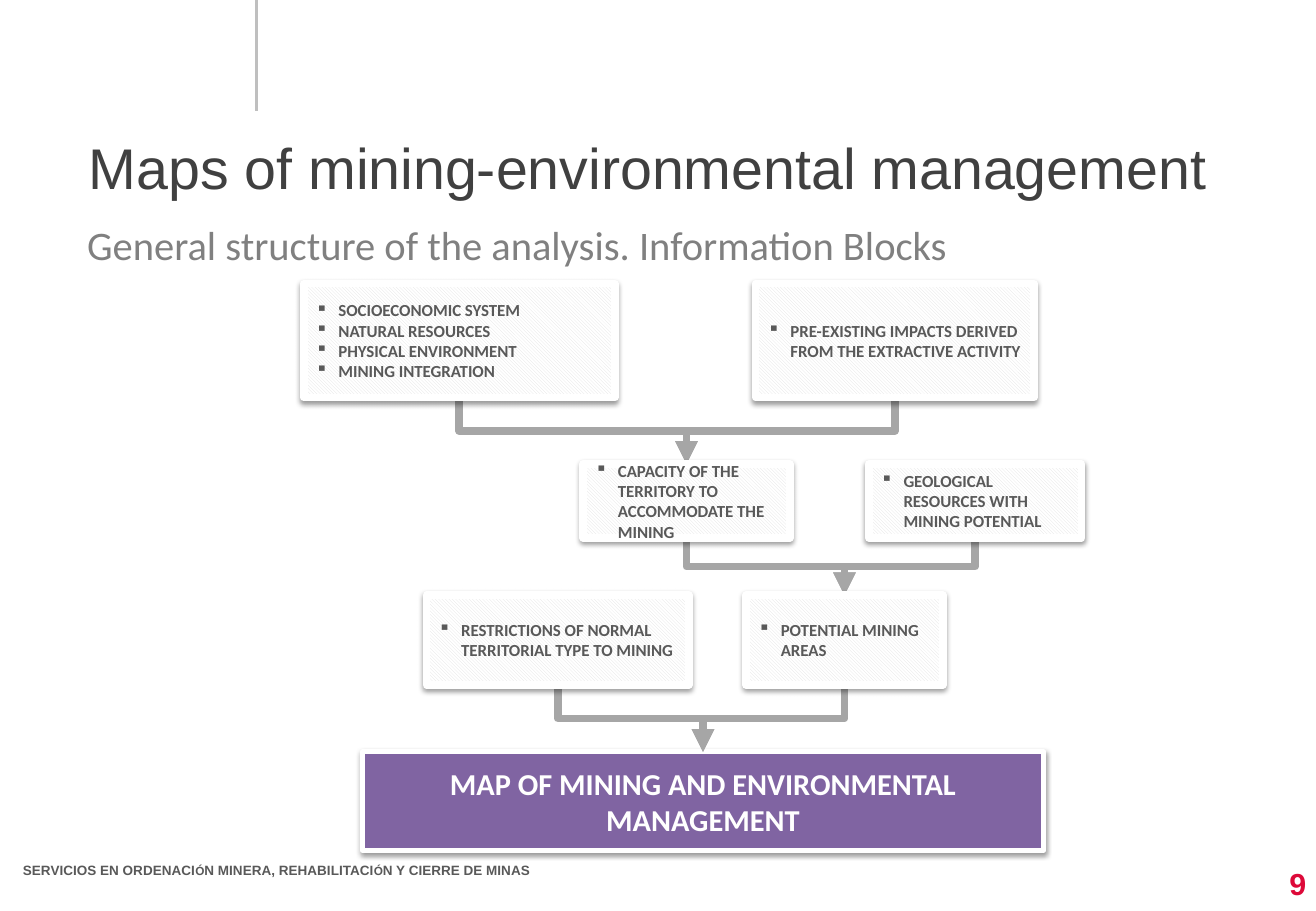
from lxml import etree
from pptx import Presentation
from pptx import util as u
from pptx.dml.color import RGBColor
from pptx.enum import dml, shapes, text
from pptx.oxml import ns

WHITE = RGBColor(0xFF, 0xFF, 0xFF)
HATCH = RGBColor(0xE2, 0xE2, 0xE2)
PURPLE = RGBColor(0x80, 0x64, 0xA2)
ARROW_GREY = RGBColor(0xA6, 0xA6, 0xA6)
RULE_GREY = RGBColor(0xBF, 0xBF, 0xBF)
TITLE_GREY = RGBColor(0x40, 0x40, 0x40)
SUBTITLE_GREY = RGBColor(0x80, 0x80, 0x80)
LABEL_GREY = RGBColor(0x59, 0x59, 0x59)
RED = RGBColor(0xDD, 0x09, 0x39)
BLACK = RGBColor(0, 0, 0)

BULLET_INDENT = 13.5
ROW_1, ROW_2, ROW_3 = (168, 67.7), (275, 44), (352.8, 53.3)
BLOCKS = {
    "geology": (514.8, 126, ROW_2, ["GEOLOGICAL RESOURCES WITH MINING POTENTIAL"]),
    "restrictions": (252.7, 155.5, ROW_3,
                     ["RESTRICTIONS OF NORMAL TERRITORIAL TYPE TO MINING"]),
    "impacts": (447.8, 164.9, ROW_1,
                ["PRE-EXISTING IMPACTS DERIVED FROM THE EXTRACTIVE ACTIVITY"]),
    "capacity": (345.6, 122.4, ROW_2,
                 ["CAPACITY OF THE TERRITORY TO ACCOMMODATE THE MINING"]),
    "systems": (180, 184.3, ROW_1,
                ["SOCIOECONOMIC SYSTEM", "NATURAL RESOURCES",
                 "PHYSICAL ENVIRONMENT", "MINING INTEGRATION"]),
    "potential": (442.1, 116.6, ROW_3, ["POTENTIAL MINING AREAS"]),
}
FLOWS = [("impacts", "capacity"), ("systems", "capacity"),
         ("capacity", "potential"), ("geology", "potential"),
         ("restrictions", "map"), ("potential", "map")]
FOOTER = [("SERVICIOS EN ORDENACI", 8), ("Ó", 7), ("N MINERA, REHABILITACI", 8),
          ("Ó", 7), ("N Y CIERRE DE MINAS", 8)]


def set_font(para, name, color, size=None, bold=False):
    """Format the whole paragraph."""
    para.font.name = name
    para.font.bold = bold
    para.font.color.rgb = color
    if size:
        para.font.size = u.Pt(size)


def add_label(page, left, top, width, height):
    """Add a wrapping text box and return its text frame."""
    box = page.shapes.add_textbox(u.Pt(left), u.Pt(top), u.Pt(width), u.Pt(height))
    box.text_frame.word_wrap = True
    return box.text_frame


def add_shadow(box):
    """Give the box a soft shadow below it."""
    box.shadow.inherit = False
    effects = box._element.spPr.find(ns.qn("a:effectLst"))
    shadow = etree.SubElement(effects, ns.qn("a:outerShdw"),
                              blurRad=str(u.Pt(3.1)), dist=str(u.Pt(1.6)),
                              dir="5400000", rotWithShape="0")
    color = etree.SubElement(shadow, ns.qn("a:srgbClr"), val=str(BLACK))
    etree.SubElement(color, ns.qn("a:alpha"), val="38000")


def add_box(page, left, top, width, height, border):
    """Add a white-framed box with a shadow and centred anchor."""
    box = page.shapes.add_shape(shapes.MSO_SHAPE.ROUNDED_RECTANGLE, u.Pt(left),
                                u.Pt(top), u.Pt(width), u.Pt(height))
    box.adjustments[0] = 0
    box.line.color.rgb = WHITE
    box.line.width = u.Pt(border)
    add_shadow(box)
    box.text_frame.word_wrap = True
    box.text_frame.vertical_anchor = text.MSO_ANCHOR.MIDDLE
    return box


def add_bullet(para):
    """Give the paragraph a square bullet with a hanging indent."""
    props = para._p.get_or_add_pPr()
    props.set("marL", str(u.Pt(BULLET_INDENT)))
    props.set("indent", str(-u.Pt(BULLET_INDENT)))
    etree.SubElement(props, ns.qn("a:buChar"), char="▪")


def add_block(page, left, width, row, items):
    """Add a hatched information block with bulleted items."""
    top, height = row
    box = add_box(page, left, top, width, height, 4.5)
    box.fill.patterned()
    box.fill.pattern = dml.MSO_PATTERN.LIGHT_DOWNWARD_DIAGONAL
    box.fill.fore_color.rgb = HATCH
    box.fill.back_color.rgb = WHITE
    box.text_frame.text = "\n".join(items)
    for para in box.text_frame.paragraphs:
        para.alignment = text.PP_ALIGN.LEFT
        add_bullet(para)
        set_font(para, "Calibri", LABEL_GREY, 10, True)


def add_line(page, kind, ends, color, width):
    """Add a connector without a shadow."""
    line = page.shapes.add_connector(kind, *(u.Pt(end) for end in ends))
    line.line.color.rgb = color
    line.line.width = u.Pt(width)
    etree.SubElement(line._element.spPr, ns.qn("a:effectLst"))
    return line


def add_flow(page, start, end):
    """Add an elbow arrow that leaves downwards and arrives downwards."""
    (x1, y1), (x2, y2) = start, end
    mid_x, mid_y = (x1 + x2) / 2, (y1 + y2) / 2
    rightward = x2 > x1
    half_drop = (y2 - y1) / 2 * (-1 if rightward else 1)
    half_span = abs(x2 - x1) / 2
    ends = (mid_x - half_drop, mid_y - half_span, mid_x + half_drop, mid_y + half_span)
    arrow = add_line(page, shapes.MSO_CONNECTOR.ELBOW, ends, ARROW_GREY, 4.5)
    arrow._element.spPr.xfrm.set("rot", "16200000" if rightward else "5400000")
    etree.SubElement(arrow.line._get_or_add_ln(), ns.qn("a:tailEnd"), type="triangle")


def add_banner(page, left, top, width, height):
    """Add the purple result banner."""
    banner = add_box(page, left, top, width, height, 3)
    banner.fill.solid()
    banner.fill.fore_color.rgb = PURPLE
    para = banner.text_frame.paragraphs[0]
    para.text = "MAP OF MINING AND ENVIRONMENTAL MANAGEMENT"
    para.alignment = text.PP_ALIGN.CENTER
    set_font(para, "Calibri", WHITE, 18, True)


def format_title(title):
    """Place and format the title placeholder."""
    title.left, title.top = u.Pt(52.6), u.Pt(71.3)
    title.width, title.height = u.Pt(680.4), u.Pt(55.4)
    frame = title.text_frame
    frame.margin_left = frame.margin_right = frame.margin_top = frame.margin_bottom = 0
    frame.auto_size = text.MSO_AUTO_SIZE.NONE
    frame.vertical_anchor = text.MSO_ANCHOR.MIDDLE
    frame.text = "Maps of mining-environmental management"
    frame.paragraphs[0].alignment = text.PP_ALIGN.LEFT
    set_font(frame.paragraphs[0], "Arial", TITLE_GREY, 34)


def add_footer(page):
    """Add the footer line and the page number."""
    para = add_label(page, 6.5, 508.3, 457.2, 19.4).paragraphs[0]
    para.line_spacing = 0.9
    set_font(para, "Arial", LABEL_GREY, bold=True)
    for words, size in FOOTER:
        span = para.add_run()
        span.text = words
        span.font.size = u.Pt(size)
    frame = add_label(page, 718.6, 509.8, 62.6, 28.1)
    frame.vertical_anchor = text.MSO_ANCHOR.MIDDLE
    frame.text = "9"
    frame.paragraphs[0].alignment = text.PP_ALIGN.RIGHT
    set_font(frame.paragraphs[0], "Arial", RED, 18, True)


def main():
    """Build the deck."""
    deck = Presentation()
    deck.slide_width, deck.slide_height = u.Pt(779.8), u.Pt(540)
    page = deck.slides.add_slide(deck.slide_layouts[5])
    format_title(page.shapes.title)
    add_line(page, shapes.MSO_CONNECTOR.STRAIGHT, (152, 0, 152, 66), RULE_GREY, 1.5)
    subtitle = add_label(page, 44.6, 126.7, 680.4, 36)
    subtitle.text = "General structure of the analysis. Information Blocks"
    set_font(subtitle.paragraphs[0], "Calibri", SUBTITLE_GREY, 24)

    banner = (214.6, 445.7, 403.9, 58.3)
    add_banner(page, *banner)
    tops = {"map": (banner[0] + banner[2] / 2, banner[1])}
    bottoms = {}
    for name, (left, width, (top, height), _) in BLOCKS.items():
        tops[name] = (left + width / 2, top)
        bottoms[name] = (left + width / 2, top + height)
    for source, target in FLOWS:
        add_flow(page, bottoms[source], tops[target])
    for block in BLOCKS.values():
        add_block(page, *block)
    add_footer(page)
    deck.save("out.pptx")


if __name__ == "__main__":
    main()
